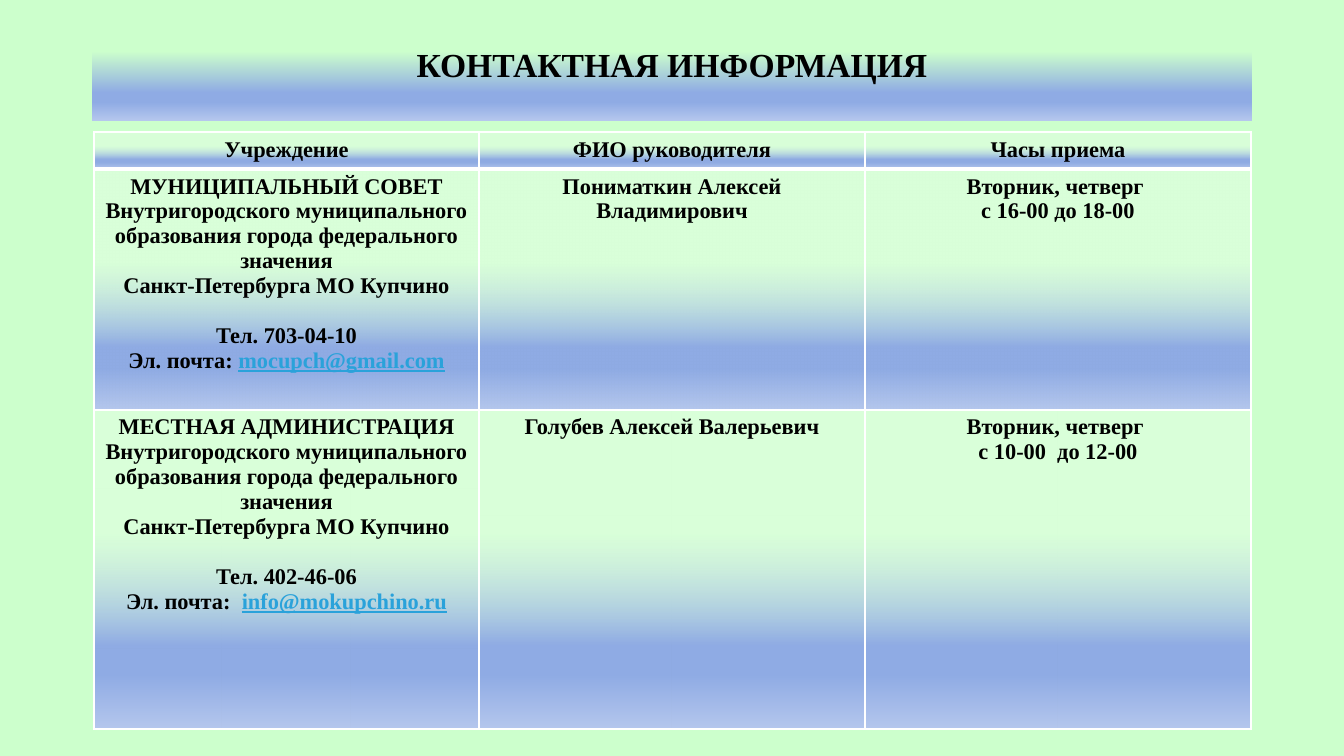
from lxml.etree import SubElement
from pptx import Presentation
from pptx.dml.color import RGBColor
from pptx.enum.text import MSO_ANCHOR, PP_ALIGN
from pptx.oxml.ns import qn
from pptx.util import Emu, Pt

PX_PER_INCH = 100.8
FONT = "Times New Roman"
BLACK = RGBColor(0x00, 0x00, 0x00)
WHITE = RGBColor(0xFF, 0xFF, 0xFF)
MINT = RGBColor(0xCC, 0xFF, 0xCC)
PALE_MINT = RGBColor(0xE7, 0xFF, 0xE7)
BLUE = RGBColor(0x8F, 0xAB, 0xE4)
PALE_BLUE = RGBColor(0xB5, 0xC7, 0xED)
LINK_BLUE = RGBColor(0x2A, 0xA2, 0xDA)

# Gradient stops: position %, colour, opacity %
BLUE_STOPS = [(74, BLUE, 100), (83, BLUE, 100), (100, PALE_BLUE, 100)]
TITLE_STOPS = [(36, MINT, 100)] + BLUE_STOPS
CELL_STOPS = [(39, PALE_MINT, 47)] + BLUE_STOPS

COLUMN_WIDTHS = [385, 386, 386]
ROW_HEIGHTS = [34, 241, 319]
HEADINGS = ["Учреждение", "ФИО руководителя", "Часы приема"]
# Body name, telephone, mail label, mail address, head, reception hours
OFFICES = [
    ("МУНИЦИПАЛЬНЫЙ СОВЕТ", "Тел. 703-04-10", "Эл. почта: ", "mocupch@gmail.com",
     "Пониматкин Алексей Владимирович", "с 16-00 до 18-00"),
    ("МЕСТНАЯ АДМИНИСТРАЦИЯ", "Тел. 402-46-06", "Эл. почта:  ", "info@mokupchino.ru",
     "Голубев Алексей Валерьевич", "с 10-00  до 12-00"),
]


def px(length):
    return Emu(round(length * 914400 / PX_PER_INCH))


def add_text(paragraph, text, size=16, color=BLACK, underline=False):
    paragraph.alignment = PP_ALIGN.CENTER
    run = paragraph.add_run()
    run.text = text
    font = run.font
    font.name, font.size, font.bold = FONT, Pt(size), True
    font.color.rgb = color
    font.underline = underline


def fill_gradient(fill, properties, stops):
    """Top-to-bottom gradient with any number of stops."""
    fill.gradient()
    fill.gradient_angle = 270
    stop_list = properties.find(qn("a:gradFill")).find(qn("a:gsLst"))
    for default_stop in list(stop_list):
        stop_list.remove(default_stop)
    for position, color, opacity in stops:
        stop = SubElement(stop_list, qn("a:gs"), pos=str(position * 1000))
        tint = SubElement(stop, qn("a:srgbClr"), val=str(color))
        if opacity < 100:
            SubElement(tint, qn("a:alpha"), val=str(opacity * 1000))


def style_cell(cell, top=1, bottom=1):
    properties = cell._tc.get_or_add_tcPr()
    for side, width in (("L", 1), ("R", 1), ("T", top), ("B", bottom)):
        line = SubElement(properties, qn(f"a:ln{side}"), w=str(Pt(width)))
        solid = SubElement(line, qn("a:solidFill"))
        SubElement(solid, qn("a:srgbClr"), val=str(WHITE))
    fill_gradient(cell.fill, properties, CELL_STOPS)


def add_lines(cell, lines):
    frame = cell.text_frame
    for index, line in enumerate(lines):
        paragraph = frame.add_paragraph() if index else frame.paragraphs[0]
        add_text(paragraph, line)
    return frame.paragraphs


def add_title(slide, left, top, width, height):
    banner = slide.shapes.add_textbox(px(left), px(top), px(width), px(height))
    fill_gradient(banner.fill, banner._element.spPr, TITLE_STOPS)
    frame = banner.text_frame
    frame.word_wrap = True
    frame.vertical_anchor = MSO_ANCHOR.MIDDLE
    frame.paragraphs[0].line_spacing = 0.9
    add_text(frame.paragraphs[0], "КОНТАКТНАЯ ИНФОРМАЦИЯ", size=24)


def add_contacts(slide, left, top):
    contacts = slide.shapes.add_table(
        len(ROW_HEIGHTS), len(COLUMN_WIDTHS), px(left), px(top),
        px(sum(COLUMN_WIDTHS)), px(sum(ROW_HEIGHTS))).table
    contacts.horz_banding = False
    for column, width in zip(contacts.columns, COLUMN_WIDTHS):
        column.width = px(width)
    for row, height in zip(contacts.rows, ROW_HEIGHTS):
        row.height = px(height)

    # Heading row, with a thicker rule below it
    for column, heading in enumerate(HEADINGS):
        style_cell(contacts.cell(0, column), bottom=3)
        add_lines(contacts.cell(0, column), [heading])

    # One row per office
    for row, office in enumerate(OFFICES, start=1):
        body, phone, mail_label, mail, head, hours = office
        cells = [contacts.cell(row, column) for column in range(len(HEADINGS))]
        for cell in cells:
            style_cell(cell, top=3 if row == 1 else 1)
        details = add_lines(cells[0], [
            body,
            "Внутригородского муниципального образования города федерального значения",
            "Санкт-Петербурга МО Купчино",
            phone,
            mail_label,
        ])
        details[3].space_before = Pt(18)
        add_text(details[4], mail, color=LINK_BLUE, underline=True)
        add_lines(cells[1], [head])
        add_lines(cells[2], ["Вторник, четверг ", hours])


def main():
    deck = Presentation()
    deck.slide_width, deck.slide_height = px(1344), px(756)
    slide = deck.slides.add_slide(deck.slide_layouts[6])
    slide.background.fill.solid()
    slide.background.fill.fore_color.rgb = MINT
    add_title(slide, 92, 12, 1160, 109)
    add_contacts(slide, 94, 132)
    deck.save("out.pptx")


if __name__ == "__main__":
    main()
